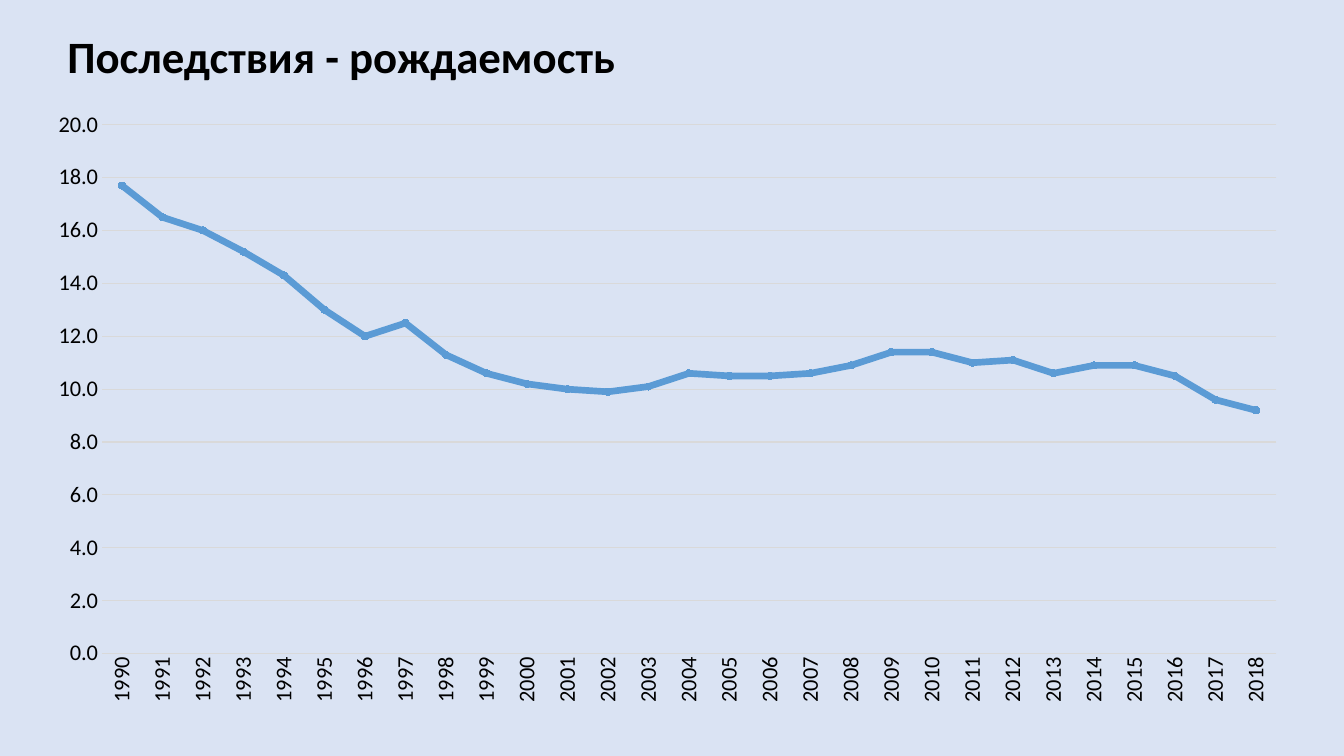
from pptx import Presentation
from pptx.chart.data import CategoryChartData
from pptx.dml.color import RGBColor
from pptx.enum import chart as ch, text
from pptx.util import Inches, Pt

TITLE = "Последствия - рождаемость"
FIRST_YEAR = 1990
BIRTH_RATES = [
    17.7, 16.5, 16, 15.2, 14.3, 13, 12, 12.5, 11.3, 10.6,
    10.2, 10, 9.9, 10.1, 10.6, 10.5, 10.5, 10.6, 10.9, 11.4,
    11.4, 11, 11.1, 10.6, 10.9, 10.9, 10.5, 9.6, 9.2,
]
TITLE_BOX = (0.57, 0.2, 11.5, 0.77)
CHART_BOX = (0.33, 0.98, 12.58, 6.11)


class Theme:
    font = "Calibri"
    background = RGBColor.from_string("DAE3F3")
    ink = RGBColor.from_string("000000")
    grid = RGBColor.from_string("D9D9D9")
    series = RGBColor.from_string("5B9BD5")
    title_size = 32
    label_size = 16
    grid_width = 0.75
    series_width = 4.75
    marker_size = 5


def style_font(font, size, bold=False):
    font.name = Theme.font
    font.size = Pt(size)
    font.bold = bold
    font.color.rgb = Theme.ink


def style_line(line, color, width):
    line.color.rgb = color
    line.width = Pt(width)


def add_text(slide, content, box, size, bold=False, spacing=0.9):
    tf = slide.shapes.add_textbox(*map(Inches, box)).text_frame
    tf.word_wrap = True
    tf.vertical_anchor = text.MSO_ANCHOR.MIDDLE
    p = tf.paragraphs[0]
    p.line_spacing = spacing
    r = p.add_run()
    r.text = content
    style_font(r.font, size, bold)


def style_axes(chart):
    years, rates = chart.category_axis, chart.value_axis
    for axis in (years, rates):
        axis.major_tick_mark = axis.minor_tick_mark = ch.XL_TICK_MARK.NONE
        style_font(axis.tick_labels.font, Theme.label_size)
    style_line(years.format.line, Theme.grid, Theme.grid_width)
    # Year labels read upwards: -90 degrees in 60000ths
    years._element.txPr.bodyPr.set("rot", "-5400000")

    rates.minimum_scale, rates.maximum_scale, rates.major_unit = 0, 20, 2
    rates.format.line.fill.background()
    rates.has_major_gridlines = True
    style_line(rates.major_gridlines.format.line, Theme.grid, Theme.grid_width)
    rates.tick_labels.number_format = "0.0"
    rates.tick_labels.number_format_is_linked = False


def add_birth_chart(slide):
    data = CategoryChartData(number_format="0.0")
    data.categories = [str(FIRST_YEAR + i) for i in range(len(BIRTH_RATES))]
    data.add_series("Series 1", BIRTH_RATES)
    chart = slide.shapes.add_chart(
        ch.XL_CHART_TYPE.LINE_MARKERS, *map(Inches, CHART_BOX), data).chart
    chart.has_title = False
    chart.has_legend = False
    style_font(chart.font, Theme.label_size)
    style_axes(chart)

    plot = chart.plots[0]
    plot.vary_by_categories = False
    s = plot.series[0]
    s.smooth = False
    style_line(s.format.line, Theme.series, Theme.series_width)
    s.marker.style = ch.XL_MARKER_STYLE.CIRCLE
    s.marker.size = Theme.marker_size
    s.marker.format.fill.solid()
    s.marker.format.fill.fore_color.rgb = Theme.series
    s.marker.format.line.color.rgb = Theme.series


def main():
    prs = Presentation()
    prs.slide_width, prs.slide_height = Inches(13.33), Inches(7.5)
    slide = prs.slides.add_slide(prs.slide_layouts[6])
    slide.background.fill.solid()
    slide.background.fill.fore_color.rgb = Theme.background
    add_text(slide, TITLE, TITLE_BOX, Theme.title_size, bold=True)
    add_birth_chart(slide)
    prs.save("out.pptx")


if __name__ == "__main__":
    main()
